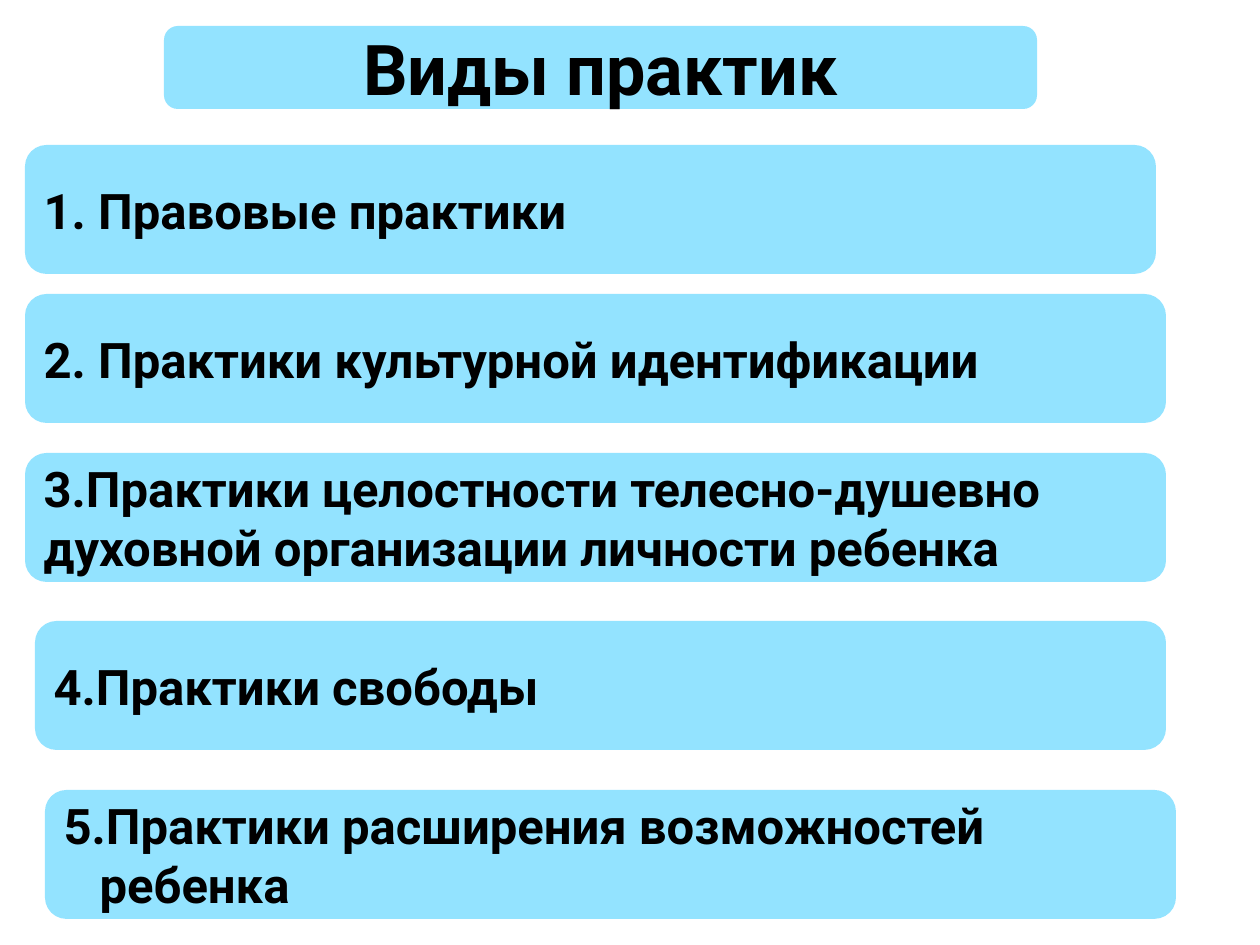
from pptx import Presentation
from pptx.dml.color import RGBColor
from pptx.enum.shapes import MSO_SHAPE
from pptx.enum.text import MSO_ANCHOR, PP_ALIGN
from pptx.util import Emu, Pt

ROUNDED = MSO_SHAPE.ROUNDED_RECTANGLE
MIDDLE = MSO_ANCHOR.MIDDLE
LEFT, CENTER = PP_ALIGN.LEFT, PP_ALIGN.CENTER
SKY = RGBColor(0x93, 0xE3, 0xFF)
BLACK = RGBColor(0, 0, 0)
FONT = "Roboto"
PRACTICE_HEIGHT = 129
CONTINUATION_INDENT = 36


def px(length):
    return Emu(round(length * 914400 / 126))


def add_panel(slide, box, text, size, align):
    """Add a rounded panel; box is left, top, width, height in px."""
    panel = slide.shapes.add_shape(ROUNDED, *map(px, box))
    panel.shadow.inherit = False
    panel.fill.solid()
    panel.fill.fore_color.rgb = SKY
    panel.line.fill.background()
    frame = panel.text_frame
    frame.word_wrap = True
    frame.vertical_anchor = MIDDLE
    frame.text = text
    for paragraph in frame.paragraphs:
        paragraph.alignment = align
        for run in paragraph.runs:
            run.font.name = FONT
            run.font.size = Pt(size)
            run.font.bold = True
            run.font.color.rgb = BLACK
    return panel


prs = Presentation()
prs.slide_width, prs.slide_height = px(1260), px(945)
slide = prs.slides.add_slide(prs.slide_layouts[6])

add_panel(slide, (164, 26, 873, 83), "Виды практик", 40, CENTER)

practices = [
    (25, 145, 1131, "1. Правовые практики"),
    (25, 294, 1141, "2. Практики культурной идентификации"),
    (25, 453, 1141, "3.Практики целостности телесно-душевно духовной организации личности ребенка"),
    (35, 621, 1131, "4.Практики свободы"),
    (45, 790, 1131, "5.Практики расширения возможностей\nребенка"),
]
for left, top, width, practice in practices:
    panel = add_panel(slide, (left, top, width, PRACTICE_HEIGHT), practice, 28, LEFT)
    for continuation in panel.text_frame.paragraphs[1:]:
        properties = continuation._p.get_or_add_pPr()
        properties.set("marL", str(px(CONTINUATION_INDENT)))

prs.save("out.pptx")
